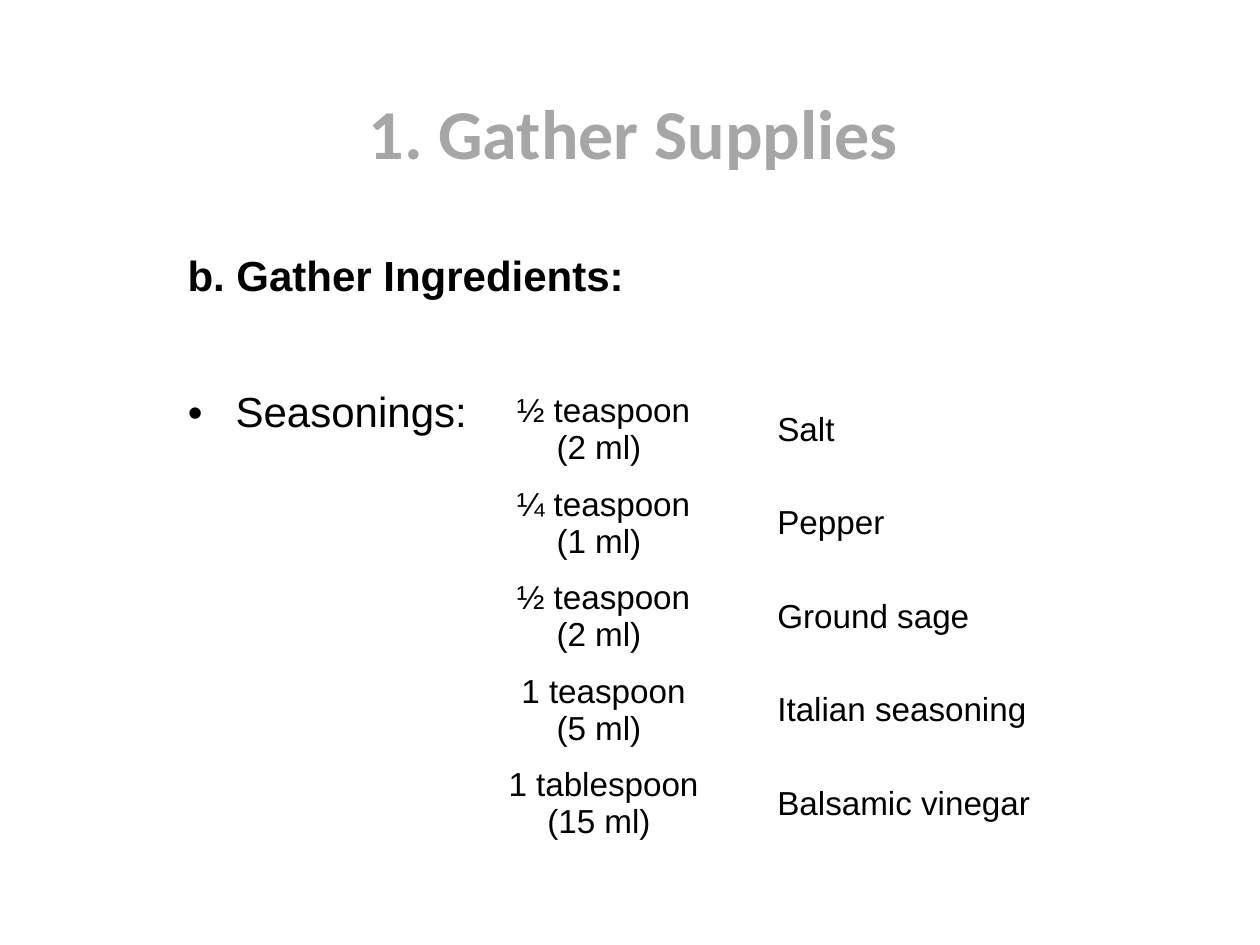
from dataclasses import dataclass

from lxml import etree
from pptx import Presentation
from pptx.dml.color import RGBColor
from pptx.enum import text
from pptx.oxml import ns
from pptx.util import Inches, Pt


@dataclass(frozen=True)
class Theme:
    title_color: RGBColor = RGBColor(0xA6, 0xA6, 0xA6)
    ink: RGBColor = RGBColor(0, 0, 0)
    title_font: str = "Calibri"
    body_font: str = "Arial"
    title_size: int = 40
    heading_size: int = 24
    item_size: int = 19


THEME = Theme()
SEASONINGS = [
    ("½ teaspoon (2 ml) ", "Salt"),
    ("¼ teaspoon (1 ml) ", "Pepper"),
    ("½ teaspoon (2 ml) ", "Ground sage"),
    ("1 teaspoon (5 ml) ", "Italian seasoning"),
    ("1 tablespoon (15 ml) ", "Balsamic vinegar"),
]


def write(tf, content, size, font=THEME.body_font, color=THEME.ink,
          bold=False, align=text.PP_ALIGN.LEFT, before=0):
    p = tf.paragraphs[0]
    p.alignment = align
    p.space_before = Pt(before)
    r = p.add_run()
    r.text = content
    r.font.size = Pt(size)
    r.font.name = font
    r.font.bold = bold
    r.font.color.rgb = color
    return p


def indent(p, left, first=0, bullet=None):
    pPr = p._p.get_or_add_pPr()
    pPr.set("marL", str(Inches(left)))
    pPr.set("indent", str(Inches(first)))
    if bullet:
        etree.SubElement(pPr, ns.qn("a:buFont"), typeface=THEME.body_font)
        etree.SubElement(pPr, ns.qn("a:buChar"), char=bullet)


def add_title(s, box, content):
    sp = s.shapes.title
    sp.left, sp.top, sp.width, sp.height = map(Inches, box)
    tf = sp.text_frame
    tf.word_wrap = True
    tf.auto_size = text.MSO_AUTO_SIZE.SHAPE_TO_FIT_TEXT
    tf.vertical_anchor = text.MSO_ANCHOR.TOP
    write(tf, content, THEME.title_size, THEME.title_font, THEME.title_color,
          bold=True, align=text.PP_ALIGN.CENTER)


def add_heading(s, box, content):
    tf = s.shapes.add_textbox(*map(Inches, box)).text_frame
    tf.word_wrap = True
    write(tf, content, THEME.heading_size, bold=True, before=3)


def add_seasonings(s, box, label, rows, widths):
    table = s.shapes.add_table(len(rows), len(widths), *map(Inches, box)).table
    table.first_row = table.horz_banding = False
    for column, width in zip(table.columns, widths):
        column.width = Inches(width)
    for cell in table.iter_cells():
        cell.fill.background()

    p = write(table.cell(0, 0).text_frame, label, THEME.heading_size)
    indent(p, 0.38, -0.38, "•")
    for i, (amount, name) in enumerate(rows):
        amount_cell, name_cell = table.cell(i, 1), table.cell(i, 2)
        for cell in (amount_cell, name_cell):
            cell.vertical_anchor = text.MSO_ANCHOR.MIDDLE
        write(amount_cell.text_frame, amount, THEME.item_size,
              align=text.PP_ALIGN.CENTER)
        name_cell.margin_left = 0
        name_cell.margin_right = Inches(0.05)
        p = write(name_cell.text_frame, name, THEME.item_size)
        p.level = 1
        indent(p, 0.5)
    tblPr = table._tbl.tblPr
    tblPr.find(ns.qn("a:tableStyleId")).text = "{2D5ABB26-0587-4C30-8999-92F81FD0307C}"


def main():
    prs = Presentation()
    prs.slide_width, prs.slide_height = Inches(10), Inches(7.5)
    s = prs.slides.add_slide(prs.slide_layouts[5])
    add_heading(s, (1.39, 1.93, 6.7, 0.75), "b. Gather Ingredients:")
    add_title(s, (0.94, 0.66, 8.17, 0.77), "1. Gather Supplies")
    add_seasonings(s, (1.39, 3.04, 7.09, 3.71), "Seasonings:", SEASONINGS,
                   (2.52, 1.76, 2.81))
    prs.save("out.pptx")


if __name__ == "__main__":
    main()
